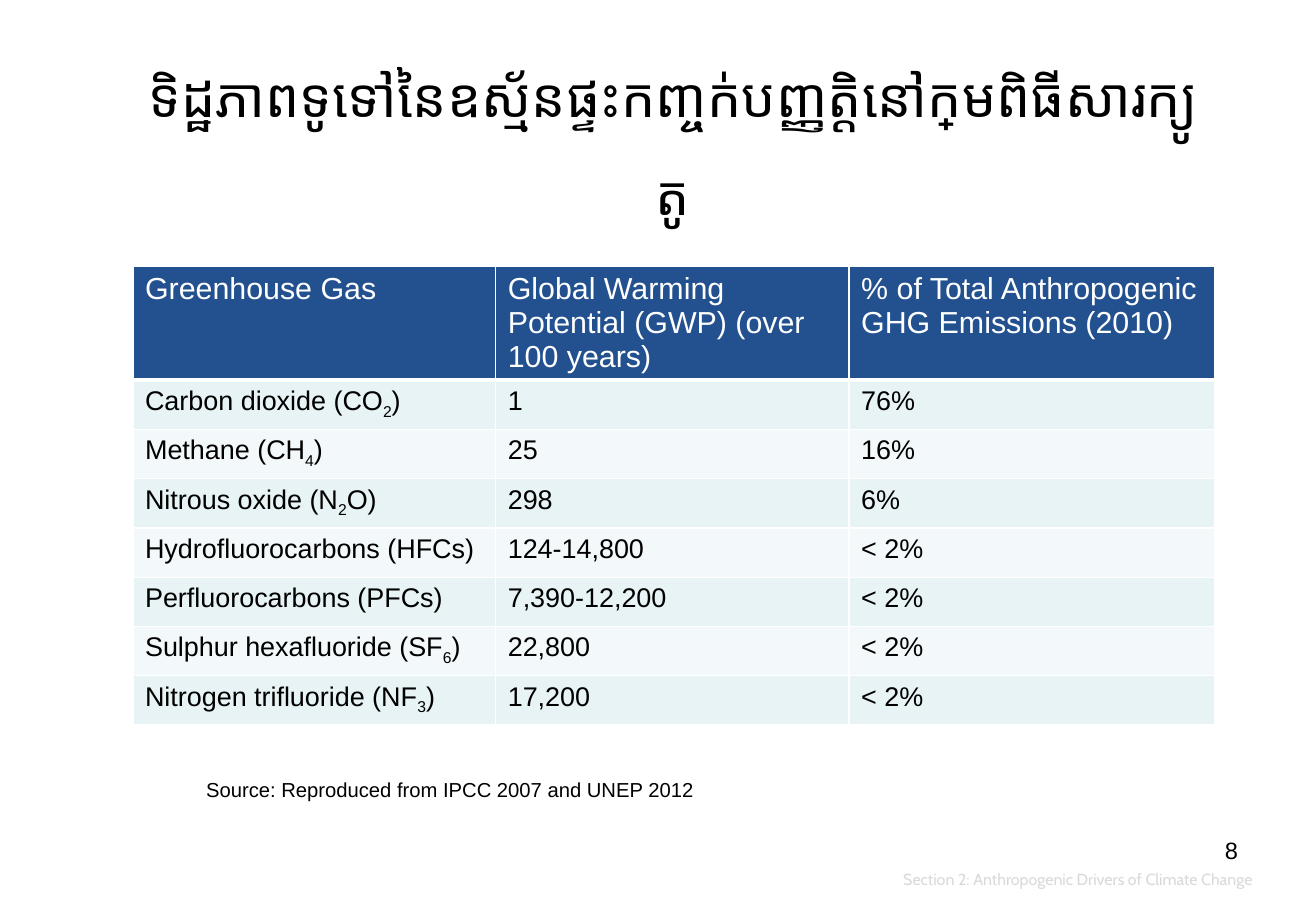
"""Build the slide on the greenhouse gases covered by the Kyoto Protocol."""
from dataclasses import dataclass

from lxml import etree
from pptx import Presentation
from pptx import util as u
from pptx.dml.color import RGBColor
from pptx.enum import text
from pptx.oxml import ns

BLACK, WHITE, GREY = "000000", "FFFFFF", "D9D9D9"
HEADER_FILL, BANDS = "23518F", ("E7F3F4", "F3F9FA")
LEFT, CENTER, RIGHT = text.PP_ALIGN.LEFT, text.PP_ALIGN.CENTER, text.PP_ALIGN.RIGHT
TOP, MIDDLE = text.MSO_ANCHOR.TOP, text.MSO_ANCHOR.MIDDLE
SUB = "_"


@dataclass(frozen=True)
class Style:
    size: float
    font: str = "Arial"
    color: str = BLACK
    align: text.PP_ALIGN = LEFT


@dataclass(frozen=True)
class Label:
    words: str
    box: tuple[float, float, float, float]
    style: Style
    anchor: text.MSO_ANCHOR = TOP


@dataclass(frozen=True)
class Gas:
    name: str
    warming_potential: str
    share: str


TITLE = Label("ទិដ្ឋភាពទូទៅនៃឧស្ម័នផ្ទះកញ្ចក់បញ្ញត្តិនៅក្រោមពិធីសារក្យូតូ",
              (77.8, 37.4, 642.2, 77.8), Style(32, "Calibri", align=CENTER), MIDDLE)
LABELS = (
    Label("8", (558.7, 491.8, 182.2, 37.4), Style(14, align=RIGHT)),
    Label("Source: Reproduced from IPCC 2007 and UNEP 2012",
          (77.8, 457.2, 378, 21.6), Style(12, align=CENTER)),
    Label("Section 2: Anthropogenic Drivers of Climate Change",
          (509.8, 504, 239.8, 34.6), Style(9.5, "Cabin", GREY, RIGHT), MIDDLE),
)
HEADER = Gas("Greenhouse Gas", "Global Warming Potential (GWP) (over 100 years)",
             "% of Total Anthropogenic GHG Emissions (2010)")
GASES = (
    Gas("Carbon dioxide (CO_2_)", "1", "76%"),
    Gas("Methane (CH_4_)", "25", "16%"),
    Gas("Nitrous oxide (N_2_O)", "298", "6%"),
    Gas("Hydrofluorocarbons (HFCs)", "124-14,800", "< 2%"),
    Gas("Perfluorocarbons (PFCs)", "7,390-12,200", "< 2%"),
    Gas("Sulphur hexafluoride (SF_6_)", "22,800", "< 2%"),
    Gas("Nitrogen trifluoride (NF_3_)", "17,200", "< 2%"),
)
TABLE_LEFT, TABLE_TOP = 78.8, 157.7
COLUMNS = (215, 209.5, 216.7)
HEADER_HEIGHT, ROW_HEIGHT = 67, 29.2


def rgb(value: str) -> RGBColor:
    """Turn a hex string into a colour."""
    return RGBColor.from_string(value)


def write(tf, words: str, style: Style) -> None:
    """Write one paragraph, lowering the pieces between subscript marks."""
    p = tf.paragraphs[0]
    p.alignment = style.align
    for i, piece in enumerate(words.split(SUB)):
        r = p.add_run()
        r.text = piece
        r.font.size = u.Pt(style.size)
        r.font.name = style.font
        r.font.color.rgb = rgb(style.color)
        if i % 2:
            r._r.get_or_add_rPr().set("baseline", "-25000")


def add_title(s, label: Label) -> None:
    """Move and fill the title placeholder."""
    sp = s.shapes.title
    sp.left, sp.top, sp.width, sp.height = map(u.Pt, label.box)
    tf = sp.text_frame
    tf.word_wrap = True
    tf.vertical_anchor = label.anchor
    write(tf, label.words, label.style)
    tf.paragraphs[0].line_spacing = 1.5


def add_label(s, label: Label) -> None:
    """Add a wrapping text box."""
    tf = s.shapes.add_textbox(*map(u.Pt, label.box)).text_frame
    tf.word_wrap = True
    tf.vertical_anchor = label.anchor
    write(tf, label.words, label.style)


def add_borders(cell, bottom: float) -> None:
    """Give a cell white borders, one point wide except at the bottom."""
    tc_pr = cell._tc.get_or_add_tcPr()
    for side, width in (("L", 1), ("R", 1), ("T", 1), ("B", bottom)):
        ln = etree.SubElement(tc_pr, ns.qn(f"a:ln{side}"), w=str(u.Pt(width)))
        fill = etree.SubElement(ln, ns.qn("a:solidFill"))
        etree.SubElement(fill, ns.qn("a:srgbClr"), val=WHITE)


def add_gas_table(s) -> None:
    """Add the banded table of gases under its header row."""
    rows = (HEADER, *GASES)
    height = HEADER_HEIGHT + ROW_HEIGHT * len(GASES)
    table = s.shapes.add_table(len(rows), len(COLUMNS), u.Pt(TABLE_LEFT), u.Pt(TABLE_TOP),
                               u.Pt(sum(COLUMNS)), u.Pt(height)).table
    for column, width in zip(table.columns, COLUMNS):
        column.width = u.Pt(width)
    for i, gas in enumerate(rows):
        is_header = i == 0
        table.rows[i].height = u.Pt(HEADER_HEIGHT if is_header else ROW_HEIGHT)
        style = Style(18, color=WHITE) if is_header else Style(16)
        fill = HEADER_FILL if is_header else BANDS[(i - 1) % 2]
        for j, words in enumerate((gas.name, gas.warming_potential, gas.share)):
            cell = table.cell(i, j)
            add_borders(cell, 3 if is_header else 1)
            cell.fill.solid()
            cell.fill.fore_color.rgb = rgb(fill)
            write(cell.text_frame, words, style)
            for r in cell.text_frame.paragraphs[0].runs:
                r.font.bold = False


def main() -> None:
    """Build and save the slide."""
    prs = Presentation()
    prs.slide_width, prs.slide_height = u.Pt(780), u.Pt(540)
    s = prs.slides.add_slide(prs.slide_layouts[5])
    add_title(s, TITLE)
    add_gas_table(s)
    for label in LABELS:
        add_label(s, label)
    prs.save("out.pptx")


if __name__ == "__main__":
    main()
